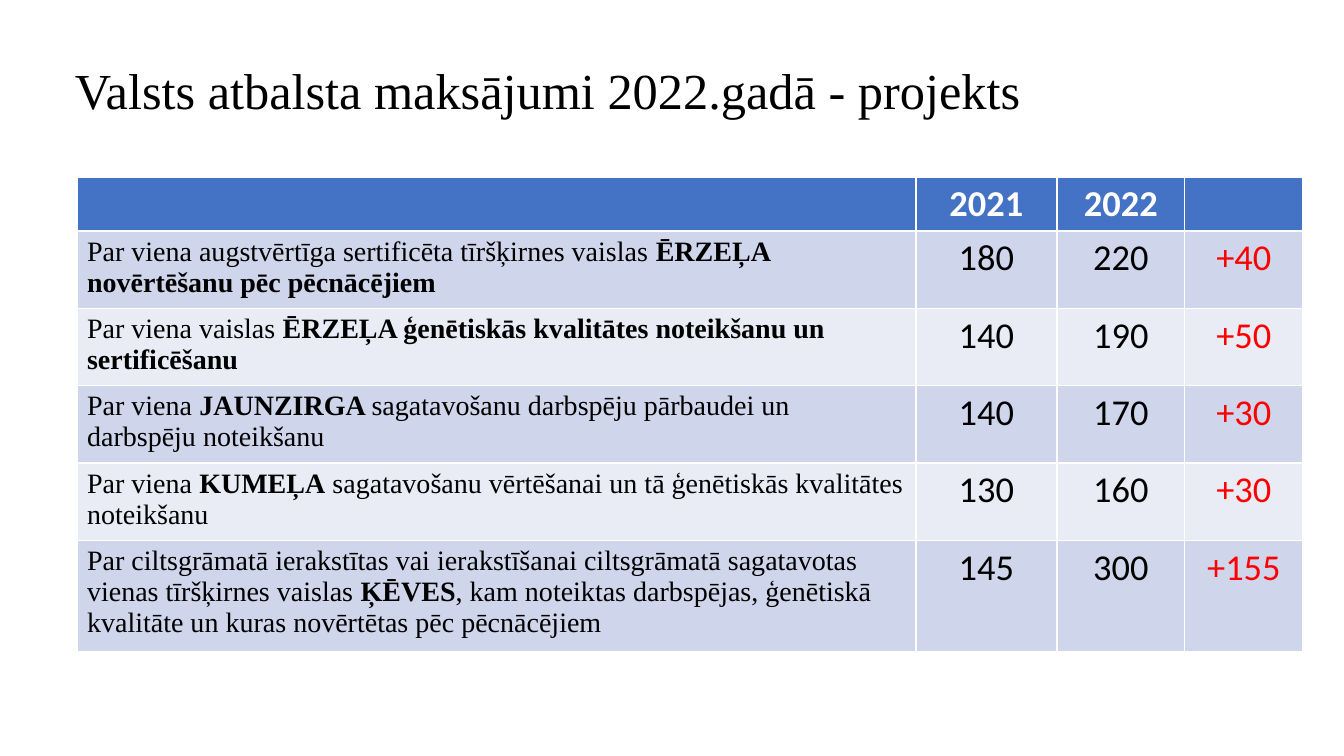
from dataclasses import dataclass

from pptx import Presentation
from pptx.dml.color import RGBColor
from pptx.enum.text import MSO_ANCHOR, PP_ALIGN
from pptx.util import Emu, Pt

EMU_PER_PX = 914400 / 100.8
SERIF, SANS = "Times New Roman", "Calibri"
BLACK, WHITE, RED = "000000", "FFFFFF", "FF0000"
HEADER_FILL = "4472C4"
BAND_FILLS = ("CFD5EA", "E9EBF5")
COLUMN_WIDTHS = (839, 141, 128, 118)
HEADER_HEIGHT = 54


@dataclass
class Payment:
    before: str
    emphasis: str
    after: str
    year_2021: int
    year_2022: int
    height: int = 72


PAYMENTS = [
    Payment("Par viena augstvērtīga sertificēta tīršķirnes vaislas ",
            "ĒRZEĻA novērtēšanu pēc pēcnācējiem", "", 180, 220),
    Payment("Par viena vaislas ",
            "ĒRZEĻA ģenētiskās kvalitātes noteikšanu un sertificēšanu", "", 140, 190),
    Payment("Par viena ", "JAUNZIRGA ",
            "sagatavošanu darbspēju pārbaudei un darbspēju noteikšanu", 140, 170),
    Payment("Par viena ", "KUMEĻA",
            " sagatavošanu vērtēšanai un tā ģenētiskās kvalitātes noteikšanu", 130, 160),
    Payment("Par ciltsgrāmatā ierakstītas vai ierakstīšanai ciltsgrāmatā sagatavotas "
            "vienas tīršķirnes vaislas ", "ĶĒVES",
            ", kam noteiktas darbspējas, ģenētiskā kvalitāte un kuras novērtētas "
            "pēc pēcnācējiem", 145, 300, height=103),
]


def px(length: int) -> Emu:
    return Emu(round(length * EMU_PER_PX))


def color(value: str) -> RGBColor:
    return RGBColor.from_string(value)


def set_font(paragraph, name: str, size: int, ink: str) -> None:
    font = paragraph.font
    font.name, font.size = name, Pt(size)
    font.color.rgb = color(ink)


def fill_cell(cell, fill: str) -> None:
    cell.fill.solid()
    cell.fill.fore_color.rgb = color(fill)


def write_figure(cell, text: str, ink: str, bold: bool = False) -> None:
    paragraph = cell.text_frame.paragraphs[0]
    paragraph.text = text
    paragraph.alignment = PP_ALIGN.CENTER
    set_font(paragraph, SANS, 26, ink)
    paragraph.font.bold = bold


def write_purpose(cell, payment: Payment) -> None:
    paragraph = cell.text_frame.paragraphs[0]
    set_font(paragraph, SERIF, 20, BLACK)
    for text, bold in ((payment.before, False), (payment.emphasis, True),
                       (payment.after, False)):
        if text:
            run = paragraph.add_run()
            run.text = text
            run.font.bold = bold


def add_heading(slide, text: str) -> None:
    frame = slide.shapes.add_textbox(px(65), px(20), px(1159), px(146)).text_frame
    frame.word_wrap = True
    frame.vertical_anchor = MSO_ANCHOR.MIDDLE
    paragraph = frame.paragraphs[0]
    paragraph.text = text
    paragraph.line_spacing = 0.9
    set_font(paragraph, SERIF, 36, BLACK)


def add_payments(slide, payments: list[Payment]) -> None:
    heights = [HEADER_HEIGHT] + [payment.height for payment in payments]
    table = slide.shapes.add_table(
        len(heights), len(COLUMN_WIDTHS), px(77), px(177),
        px(sum(COLUMN_WIDTHS)), px(sum(heights))).table
    for column, width in zip(table.columns, COLUMN_WIDTHS):
        column.width = px(width)
    for row, height in zip(table.rows, heights):
        row.height = px(height)

    # Header row
    for cell, year in zip(table.rows[0].cells, ("", "2021", "2022", "")):
        fill_cell(cell, HEADER_FILL)
        write_figure(cell, year, WHITE, bold=True)

    # One banded row per payment, ending with the increase
    for index, payment in enumerate(payments):
        cells = list(table.rows[index + 1].cells)
        for cell in cells:
            fill_cell(cell, BAND_FILLS[index % 2])
        write_purpose(cells[0], payment)
        write_figure(cells[1], str(payment.year_2021), BLACK)
        write_figure(cells[2], str(payment.year_2022), BLACK)
        write_figure(cells[3], f"{payment.year_2022 - payment.year_2021:+d}", RED)


def main() -> None:
    presentation = Presentation()
    presentation.slide_width, presentation.slide_height = px(1344), px(756)
    slide = presentation.slides.add_slide(presentation.slide_layouts[6])
    add_heading(slide, "Valsts atbalsta maksājumi 2022.gadā - projekts")
    add_payments(slide, PAYMENTS)
    presentation.save("out.pptx")


if __name__ == "__main__":
    main()
